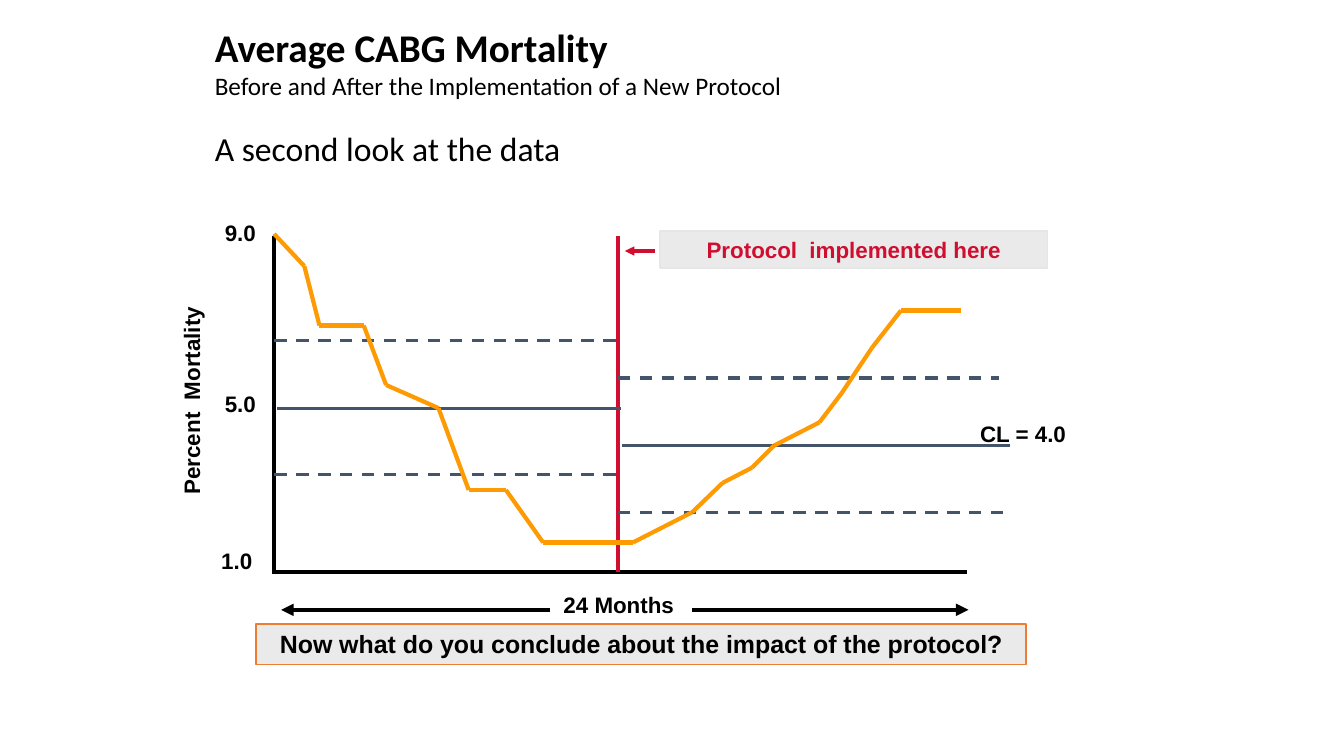
from pptx import Presentation
from pptx.dml.color import RGBColor
from pptx.enum.dml import MSO_LINE
from pptx.enum.shapes import MSO_CONNECTOR, MSO_SHAPE
from pptx.enum.text import MSO_ANCHOR, MSO_AUTO_SIZE, PP_ALIGN
from pptx.oxml.ns import qn
from pptx.util import Pt
from lxml.etree import SubElement

BLACK = RGBColor(0x00, 0x00, 0x00)
RED = RGBColor(0xCF, 0x0E, 0x30)
AMBER = RGBColor(0xFE, 0x9B, 0x03)
SLATE = RGBColor(0x44, 0x54, 0x6A)
ORANGE = RGBColor(0xED, 0x7D, 0x31)
PALE_GRAY = RGBColor(0xEA, 0xEA, 0xEA)
EDGE_GRAY = RGBColor(0xE7, 0xE6, 0xE6)

LABEL_HEIGHT = 26.6

# Points of the mortality curve, measured from the top of the vertical axis
MORTALITY_CURVE = [
    (0, -1.4), (21.6, 21.6), (32.4, 64), (64, 64), (80, 106.5),
    (117.4, 123), (139, 181.5), (165.6, 181.5), (192.2, 219),
    (256.3, 219), (298.8, 197.3), (320.4, 176.4), (341.3, 165.6),
    (357.1, 149.8), (389.5, 133.2), (405.4, 112.3), (427, 80),
    (447.8, 53.3), (491, 53.3),
]
# Limits before and after the protocol: start, end, height, dashed
CONTROL_LIMITS = [
    (2, 247.5, 123, False), (0, 245.5, 75, True), (0, 245.5, 170.6, True),
    (245.5, 522.7, 197.3, True), (245.5, 517.7, 101.5, True),
    (248.4, 525.6, 149.8, False),
]
# Text, left, top, width
AXIS_LABELS = [
    ("9.0", -48.2, -15.8, 48.2), ("5.0", -48.2, 106.5, 48.2),
    ("1.0", -53.3, 218.9, 53.3), ("24 Months ", 176.4, 250.5, 144),
    ("CL = 4.0", 488.2, 128.2, 93.6),
]


def format_run(run, size, font_name, color, bold):
    run.font.size = Pt(size)
    run.font.name = font_name
    run.font.color.rgb = color
    run.font.bold = bold


def add_line(slide, start, end, color, width=3, dashed=False, arrow=False):
    connector = slide.shapes.add_connector(
        MSO_CONNECTOR.STRAIGHT, *(Pt(value) for value in (*start, *end)))
    connector.line.color.rgb = color
    connector.line.width = Pt(width)
    if dashed:
        connector.line.dash_style = MSO_LINE.DASH
    if arrow:
        SubElement(connector.line._get_or_add_ln(), qn("a:tailEnd"), type="triangle")
    SubElement(connector._element.spPr, qn("a:effectLst"))


def write_centered(shape, text, size=16, color=BLACK):
    frame = shape.text_frame
    frame.text = text
    frame.word_wrap = True
    frame.vertical_anchor = MSO_ANCHOR.TOP
    paragraph = frame.paragraphs[0]
    paragraph.alignment = PP_ALIGN.CENTER
    format_run(paragraph.runs[0], size, "Arial", color, True)


def add_label(slide, text, left, top, width):
    label = slide.shapes.add_textbox(Pt(left), Pt(top), Pt(width), Pt(LABEL_HEIGHT))
    write_centered(label, text)
    return label


def add_banner(slide, text, left, top, width, height, edge, size, color):
    banner = slide.shapes.add_shape(
        MSO_SHAPE.RECTANGLE, Pt(left), Pt(top), Pt(width), Pt(height))
    banner.shadow.inherit = False
    banner.fill.solid()
    banner.fill.fore_color.rgb = PALE_GRAY
    banner.line.color.rgb = edge
    banner.line.width = Pt(1)
    write_centered(banner, text, size, color)


def write_heading(slide, left, top, width, height):
    title = slide.shapes.title
    title.left, title.top, title.width, title.height = (
        Pt(value) for value in (left, top, width, height))
    frame = title.text_frame
    frame.text = ("Average CABG Mortality\vBefore and After the Implementation "
                  "of a New Protocol\nA second look at the data")
    frame.auto_size = MSO_AUTO_SIZE.NONE
    frame.word_wrap = True
    frame.vertical_anchor = MSO_ANCHOR.TOP
    for paragraph in frame.paragraphs:
        paragraph.alignment = PP_ALIGN.LEFT
    frame.paragraphs[1].space_before = Pt(19.5)
    runs = [run for paragraph in frame.paragraphs for run in paragraph.runs]
    for run, size, bold in zip(runs, (28, 18, 24), (True, False, False)):
        format_run(run, size, "Calibri", BLACK, bold)


def draw_run_chart(slide, left, top, width, height):
    def at(x, y):
        return left + x, top + y

    protocol_x = 245.5
    add_line(slide, at(0, 0), at(0, height), BLACK)
    add_line(slide, at(-1.4, height), at(width, height), BLACK)
    add_line(slide, at(protocol_x, height), at(protocol_x, 0), RED)
    for start, end, y, dashed in CONTROL_LIMITS:
        add_line(slide, at(start, y), at(end, y), SLATE, 2.25, dashed)
    for start, end in zip(MORTALITY_CURVE, MORTALITY_CURVE[1:]):
        add_line(slide, at(*start), at(*end), AMBER)
    for start, end in ((298.8, 496), (197.3, 5)):
        add_line(slide, at(start, 267.1), at(end, 267.1), BLACK, arrow=True)

    for text, x, y, label_width in AXIS_LABELS:
        add_label(slide, text, *at(x, y), label_width)
    axis_title = add_label(slide, "Percent  Mortality", *at(-144.7, 104.4), 171.4)
    axis_title.rotation = 270

    add_banner(slide, "Protocol  implemented here", *at(275.8, -3.6),
               276.5, LABEL_HEIGHT, EDGE_GRAY, 16, RED)
    add_line(slide, at(272.2, 10.8), at(250.6, 10.8), RED, 2.25, arrow=True)


def main():
    presentation = Presentation()
    presentation.slide_width = Pt(960)
    presentation.slide_height = Pt(540)
    slide = presentation.slides.add_slide(presentation.slide_layouts[5])
    write_heading(slide, 146.2, 13, 639.4, 111.6)
    draw_run_chart(slide, 195.8, 168.5, 494.6, 240)
    add_banner(slide, "Now what do you conclude about the impact of the protocol?",
               182.9, 445.7, 550, 28.8, ORANGE, 17.8, BLACK)
    presentation.save("out.pptx")


if __name__ == "__main__":
    main()
